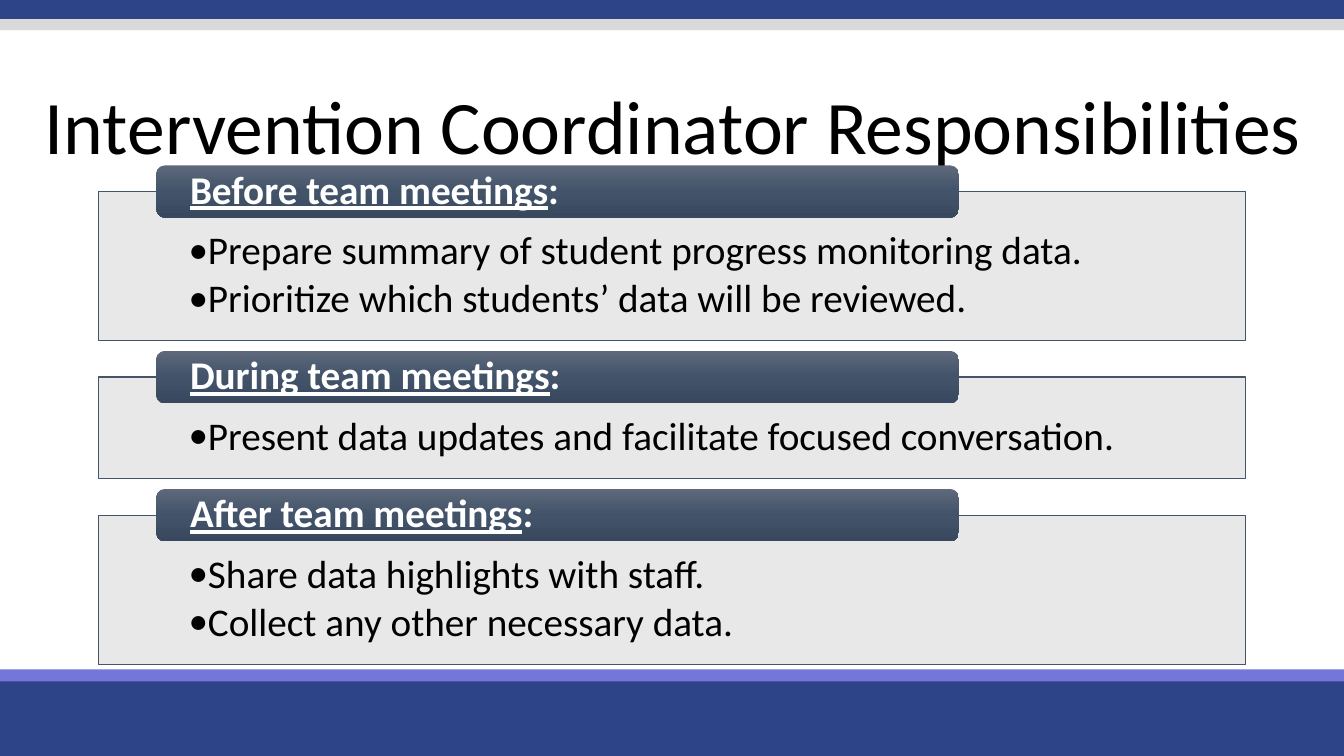
import copy
import dataclasses

import pptx
import pptx.dml.color
import pptx.enum.shapes
import pptx.enum.text
import pptx.oxml
import pptx.oxml.ns
import pptx.util
from pptx.util import Inches

SHAPES = pptx.enum.shapes.MSO_SHAPE
ANCHOR = pptx.enum.text.MSO_ANCHOR
ALIGN = pptx.enum.text.PP_ALIGN


@dataclasses.dataclass(frozen=True)
class Theme:
    font: str = "Calibri"
    title_size: int = 54
    text_size: int = 28
    ink: str = "000000"
    tab_ink: str = "FFFFFF"
    navy: str = "2E4488"
    violet: str = "7476DA"
    silver: str = "D9D9D9"
    card_fill: str = "E7E6E6"
    card_opacity: int = 90
    card_line: str = "44546A"
    tab_stops: tuple = ((0, "5E697B"), (0.5, "42536A"), (1, "38495F"))


THEME = Theme()
SLIDE_WIDTH, SLIDE_HEIGHT = 13.33, 7.5
CARD_LEFT, CARD_WIDTH, CARD_TOP, CARD_GAP = 0.98, 11.37, 1.9, 0.36
CARD_PADDING, LINE_HEIGHT = 0.54, 0.47
TAB_LEFT, TAB_WIDTH, TAB_HEIGHT = 1.55, 7.96, 0.52

BANDS = (
    (6.7, 0.8, THEME.navy),
    (6.64, 0.12, THEME.violet),
    (-0.03, 0.22, THEME.navy),
    (0.19, 0.11, THEME.silver),
)
STAGES = (
    ("Before team meetings", (
        "Prepare summary of student progress monitoring data.",
        "Prioritize which students’ data will be reviewed.",
    )),
    ("During team meetings", (
        "Present data updates and facilitate focused conversation.",
    )),
    ("After team meetings", (
        "Share data highlights with staff.",
        "Collect any other necessary data.",
    )),
)


def rgb(value):
    return pptx.dml.color.RGBColor.from_string(value)


def child(parent, tag, **attributes):
    element = pptx.oxml.parse_xml(f"<{tag} {pptx.oxml.ns.nsdecls('a')}/>")
    for name, value in attributes.items():
        element.set(name, str(value))
    parent.append(element)
    return element


def style_font(font, size, color):
    font.name = THEME.font
    font.size = pptx.util.Pt(size)
    font.color.rgb = rgb(color)


def set_frame(frame, anchor, left, top, right, bottom):
    frame.word_wrap = True
    frame.auto_size = pptx.enum.text.MSO_AUTO_SIZE.NONE
    frame.vertical_anchor = anchor
    frame.margin_left, frame.margin_top = Inches(left), Inches(top)
    frame.margin_right, frame.margin_bottom = Inches(right), Inches(bottom)


def add_box(page, kind, left, top, width, height):
    box = page.shapes.add_shape(
        kind, Inches(left), Inches(top), Inches(width), Inches(height))
    box.shadow.inherit = False
    box.line.fill.background()
    return box


def fill_solid(box, color):
    box.fill.solid()
    box.fill.fore_color.rgb = rgb(color)


def add_band(page, top, height, color):
    fill_solid(add_box(page, SHAPES.RECTANGLE, 0, top, SLIDE_WIDTH, height), color)


def set_title(page, text):
    title = page.shapes.title
    title.left, title.top = Inches(0.01), Inches(0.7)
    title.width, title.height = Inches(SLIDE_WIDTH), Inches(1.18)
    title.text_frame.text = text
    set_frame(title.text_frame, ANCHOR.MIDDLE, 0.1, 0.05, 0.1, 0.05)
    para = title.text_frame.paragraphs[0]
    para.alignment = ALIGN.CENTER
    para.line_spacing = 0.9
    style_font(para.runs[0].font, THEME.title_size, THEME.ink)


def format_bullet(para, first):
    para.level = 1
    para.alignment = ALIGN.LEFT
    para.line_spacing = 0.9
    para.space_before = pptx.util.Pt(0 if first else 4.2)
    properties = para._p.get_or_add_pPr()
    properties.set("marL", str(Inches(0.19)))
    properties.set("indent", str(Inches(-0.19)))
    child(child(properties, "a:buClr"), "a:srgbClr", val=THEME.ink)
    child(properties, "a:buFont", typeface=THEME.font)
    child(properties, "a:buChar", char="•")
    style_font(para.font, THEME.text_size, THEME.ink)
    style_font(para.runs[0].font, THEME.text_size, THEME.ink)


def add_card(page, top, height, duties):
    card = add_box(page, SHAPES.RECTANGLE, CARD_LEFT, top, CARD_WIDTH, height)
    fill_solid(card, THEME.card_fill)
    color = card._element.spPr.find(".//" + pptx.oxml.ns.qn("a:srgbClr"))
    child(color, "a:alpha", val=THEME.card_opacity * 1000)
    card.line.color.rgb = rgb(THEME.card_line)
    card.line.width = pptx.util.Pt(0.75)
    frame = card.text_frame
    set_frame(frame, ANCHOR.TOP, 0.89, 0.39, 0.89, 0.22)
    frame.text = "\n".join(duties)
    for index, para in enumerate(frame.paragraphs):
        format_bullet(para, index == 0)


def fill_gradient(box, stops):
    box.fill.gradient()
    box.fill.gradient_angle = 270
    stop_list = box._element.spPr.find(".//" + pptx.oxml.ns.qn("a:gsLst"))
    stop_list.insert(1, copy.deepcopy(stop_list[0]))
    for stop, (position, color) in zip(box.fill.gradient_stops, stops):
        stop.position = position
        stop.color.rgb = rgb(color)


def add_tab(page, top, heading):
    tab = add_box(page, SHAPES.ROUNDED_RECTANGLE, TAB_LEFT, top, TAB_WIDTH, TAB_HEIGHT)
    tab.adjustments[0] = 0.167
    fill_gradient(tab, THEME.tab_stops)
    set_frame(tab.text_frame, ANCHOR.MIDDLE, 0.31, 0, 0.31, 0)
    para = tab.text_frame.paragraphs[0]
    para.alignment = ALIGN.LEFT
    para.line_spacing = 0.9
    for text, underlined in ((heading, True), (":", False)):
        span = para.add_run()
        span.text = text
        style_font(span.font, THEME.text_size, THEME.tab_ink)
        span.font.bold = True
        span.font.underline = underlined


def main():
    deck = pptx.Presentation()
    deck.slide_width, deck.slide_height = Inches(SLIDE_WIDTH), Inches(SLIDE_HEIGHT)
    page = deck.slides.add_slide(deck.slide_layouts.get_by_name("Title Only"))
    for band in BANDS:
        add_band(page, *band)
    set_title(page, "Intervention Coordinator Responsibilities")
    top = CARD_TOP
    for heading, duties in STAGES:
        height = CARD_PADDING + LINE_HEIGHT * len(duties)
        add_card(page, top, height, duties)
        add_tab(page, top - TAB_HEIGHT / 2, heading)
        top += height + CARD_GAP
    deck.save("out.pptx")


if __name__ == "__main__":
    main()
